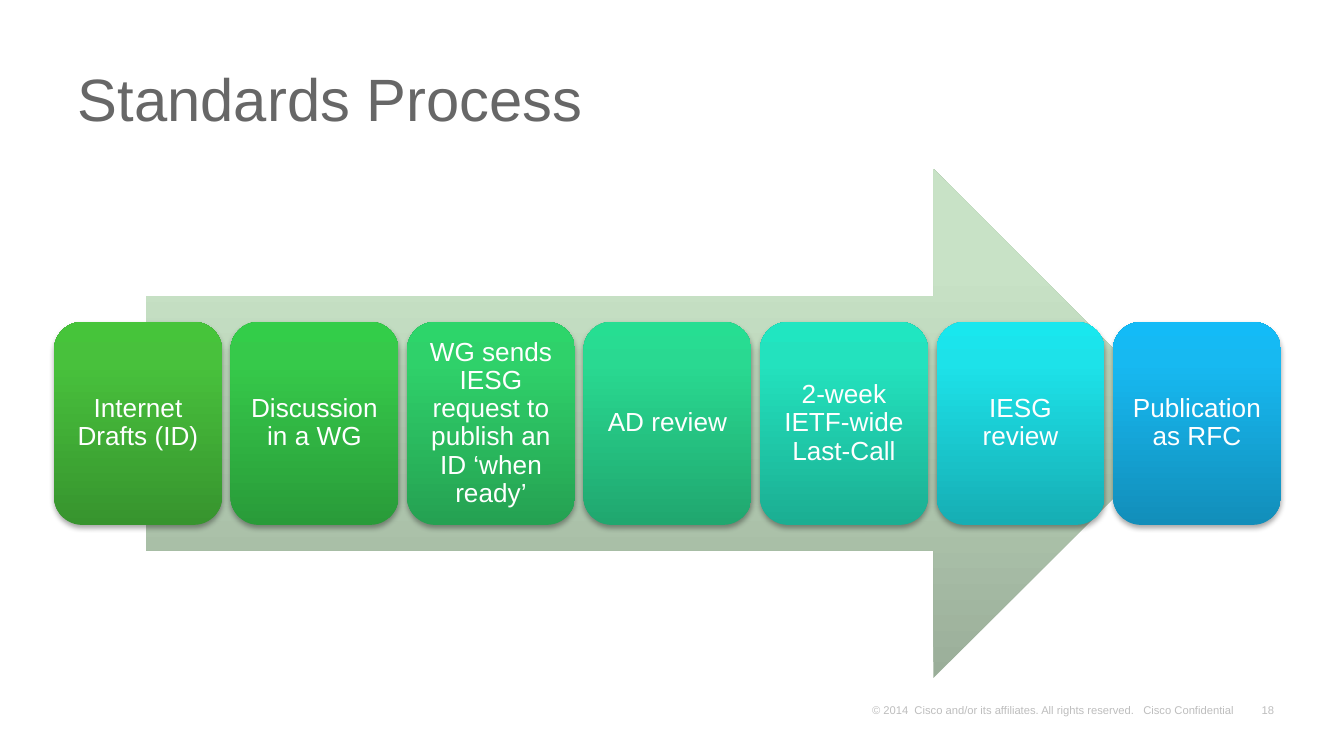
"""Build the Standards Process slide: seven steps along a wide arrow."""
from copy import deepcopy

from pptx import Presentation
from pptx.dml.color import RGBColor
from pptx.enum.shapes import MSO_SHAPE
from pptx.enum.text import MSO_ANCHOR, PP_ALIGN
from pptx.oxml import parse_xml
from pptx.oxml.ns import nsdecls
from pptx.util import Pt

ARROW, BOX = MSO_SHAPE.RIGHT_ARROW, MSO_SHAPE.ROUNDED_RECTANGLE
MIDDLE, BOTTOM = MSO_ANCHOR.MIDDLE, MSO_ANCHOR.BOTTOM
LEFT, CENTER, RIGHT = PP_ALIGN.LEFT, PP_ALIGN.CENTER, PP_ALIGN.RIGHT
WHITE = RGBColor(0xFF, 0xFF, 0xFF)
BLACK = RGBColor(0x00, 0x00, 0x00)
GREY = RGBColor(0x67, 0x67, 0x67)

PX = 914400 / 134.4
SLIDE_W, SLIDE_H = 1344, 756
STOPS = (0, 0.8, 1)

TITLE = "Standards Process"
FOOTERS = [
    ("18", (1251, 698, 32, 23), RIGHT, False),
    ("© 2014  Cisco and/or its affiliates. All rights reserved.   Cisco Confidential",
     (863, 698, 391, 23), LEFT, True),
]
ARROW_AT = (146, 169, 1042, 509)
ARROW_COLORS = ("9AAE99", "C8E2C6", "C8E3C7")
STEPS = [
    ("Internet Drafts (ID)", ("37942E", "48C13C", "46C43A")),
    ("Discussion in a WG", ("299B39", "36C94A", "33CD49")),
    ("WG sends IESG request to publish an ID ‘when ready’", ("25A152", "2FD16A", "2DD56A")),
    ("AD review", ("20A76F", "29D991", "26DE92")),
    ("2-week IETF-wide Last-Call", ("1BAE92", "23E2BE", "20E6C1")),
    ("IESG review", ("16AEB4", "1DE2E9", "19E7EE")),
    ("Publication as RFC", ("128EBA", "17B9F1", "13BBF7")),
]
FIRST_X, LAST_X, STEP_Y, STEP_W, STEP_H = 54, 1113, 322, 168, 203

SHADOW = (f'<a:outerShdw {nsdecls("a")} blurRad="39400" dist="22900" dir="5400000" '
          'rotWithShape="0"><a:srgbClr val="000000"><a:alpha val="35000"/>'
          '</a:srgbClr></a:outerShdw>')
ALPHA = f'<a:alpha {nsdecls("a")} val="25000"/>'


def emu(box):
    return [round(v * PX) for v in box]


def write(sp, text, size, color, align, anchor, inset, spacing=1.0, wrap=True):
    tf = sp.text_frame
    x, y = emu(inset)
    frame = {"margin_left": x, "margin_right": x, "margin_top": y, "margin_bottom": y,
             "vertical_anchor": anchor, "word_wrap": wrap}
    for name, value in frame.items():
        setattr(tf, name, value)
    p = tf.paragraphs[0]
    p.alignment, p.line_spacing = align, spacing
    r = p.add_run()
    r.text = text
    for name, value in {"name": "Arial", "size": Pt(size)}.items():
        setattr(r.font, name, value)
    r.font.color.rgb = color
    return r


def add_gradient_shape(slide, kind, box, colors):
    sp = slide.shapes.add_shape(kind, *emu(box))
    sp.shadow.inherit = False
    sp.line.fill.background()
    sp.fill.gradient()
    sp.fill.gradient_angle = 90
    stop_list = sp._element.xpath(".//a:gsLst")[0]
    stop_list.append(deepcopy(stop_list[0]))
    for stop, position, color in zip(sp.fill.gradient_stops, STOPS, colors):
        stop.position = position
        stop.color.rgb = RGBColor.from_string(color)
    return sp


def main():
    prs = Presentation()
    prs.slide_width, prs.slide_height = emu((SLIDE_W, SLIDE_H))
    slide = prs.slides.add_slide(prs.slide_layouts[6])

    for text, box, align, wrap in FOOTERS:
        sp = slide.shapes.add_textbox(*emu(box))
        r = write(sp, text, 6, BLACK, align, BOTTOM, (9, 4), wrap=wrap)
        r._r.xpath(".//a:srgbClr")[0].append(parse_xml(ALPHA))

    sp = slide.shapes.add_textbox(*emu((65, 50, 1227, 108)))
    write(sp, TITLE, 32, GREY, LEFT, MIDDLE, (13, 7), 0.8)

    add_gradient_shape(slide, ARROW, ARROW_AT, ARROW_COLORS)
    pitch = (LAST_X - FIRST_X) / (len(STEPS) - 1)
    for i, (text, colors) in enumerate(STEPS):
        box = (FIRST_X + i * pitch, STEP_Y, STEP_W, STEP_H)
        sp = add_gradient_shape(slide, BOX, box, colors)
        sp._element.xpath(".//a:effectLst")[0].append(parse_xml(SHADOW))
        write(sp, text, 14, WHITE, CENTER, MIDDLE, (8, 8), 0.9)

    prs.save("out.pptx")


if __name__ == "__main__":
    main()
